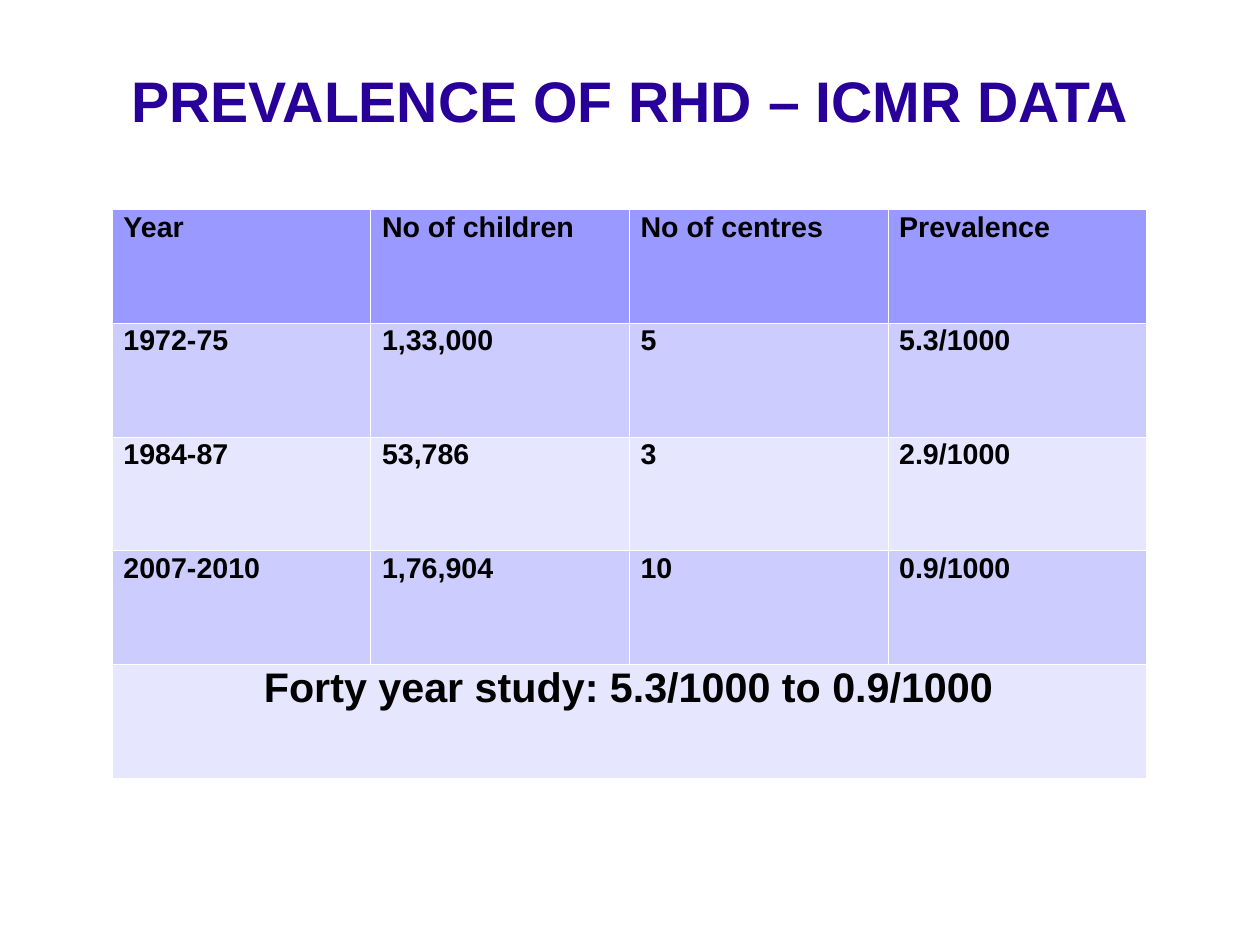
from dataclasses import dataclass

from lxml.etree import SubElement
from pptx import Presentation
from pptx.dml.color import RGBColor
from pptx.enum.text import MSO_ANCHOR, PP_ALIGN
from pptx.oxml.ns import qn
from pptx.util import Cm, Inches, Pt


@dataclass(frozen=True)
class Theme:
    font: str = "Arial"
    title: str = "280099"
    text: str = "000000"
    header: str = "9999FF"
    bands: tuple = ("CCCCFF", "E6E6FF")
    border: str = "FFFFFF"
    border_width: float = 0.11
    title_size: int = 36
    cell_size: int = 18
    summary_size: int = 26


theme = Theme()


def add_run(p, text, size, color):
    r = p.add_run()
    r.text = text
    r.font.name = theme.font
    r.font.size = Pt(size)
    r.font.bold = True
    r.font.color.rgb = RGBColor.from_string(color)


def add_borders(cell):
    """Line all four sides; must run before the fill, which follows lines in the XML."""
    for side in ("a:lnL", "a:lnR", "a:lnT", "a:lnB"):
        ln = SubElement(cell._tc.get_or_add_tcPr(), qn(side), w=str(Pt(theme.border_width)))
        fill = SubElement(ln, qn("a:solidFill"))
        SubElement(fill, qn("a:srgbClr"), val=theme.border)


prs = Presentation()
prs.slide_width = Cm(28)
prs.slide_height = Cm(21)
W, H = prs.slide_width, prs.slide_height
s = prs.slides.add_slide(prs.slide_layouts[6])

# Title
title_width = int(W * 0.9)
sp = s.shapes.add_textbox((W - title_width) // 2, int(H * 0.02), title_width, Inches(1.39))
tf = sp.text_frame
tf.word_wrap = True
tf.vertical_anchor = MSO_ANCHOR.MIDDLE
tf.margin_left = tf.margin_right = tf.margin_bottom = 0
tf.margin_top = Inches(0.03)
p = tf.paragraphs[0]
p.alignment = PP_ALIGN.CENTER
add_run(p, "PREVALENCE OF RHD – ICMR DATA", theme.title_size, theme.title)

# Table
rows = [
    ("Year", "No of children", "No of centres", "Prevalence"),
    ("1972-75", "1,33,000", "5", "5.3/1000"),
    ("1984-87", "53,786", "3", "2.9/1000"),
    ("2007-2010", "1,76,904", "10", "0.9/1000"),
    ("Forty year study: 5.3/1000 to 0.9/1000", "", "", ""),
]
n_rows, n_cols = len(rows), len(rows[0])
summary = n_rows - 1
table = s.shapes.add_table(
    n_rows, n_cols, Inches(0.98), Inches(1.83), Inches(9.05), Inches(4.98)
).table
table.first_row = table.horz_banding = False
table.cell(summary, 0).merge(table.cell(summary, n_cols - 1))

for i, row in enumerate(rows):
    color = theme.bands[(i - 1) % 2] if i else theme.header
    for j, text in enumerate(row):
        cell = table.cell(i, j)
        add_borders(cell)
        cell.fill.solid()
        cell.fill.fore_color.rgb = RGBColor.from_string(color)
        if not text:
            continue
        p = cell.text_frame.paragraphs[0]
        p.line_spacing = 0.87
        p.alignment = PP_ALIGN.CENTER if i == summary else PP_ALIGN.LEFT
        size = theme.summary_size if i == summary else theme.cell_size
        add_run(p, text, size, theme.text)

prs.save("out.pptx")
